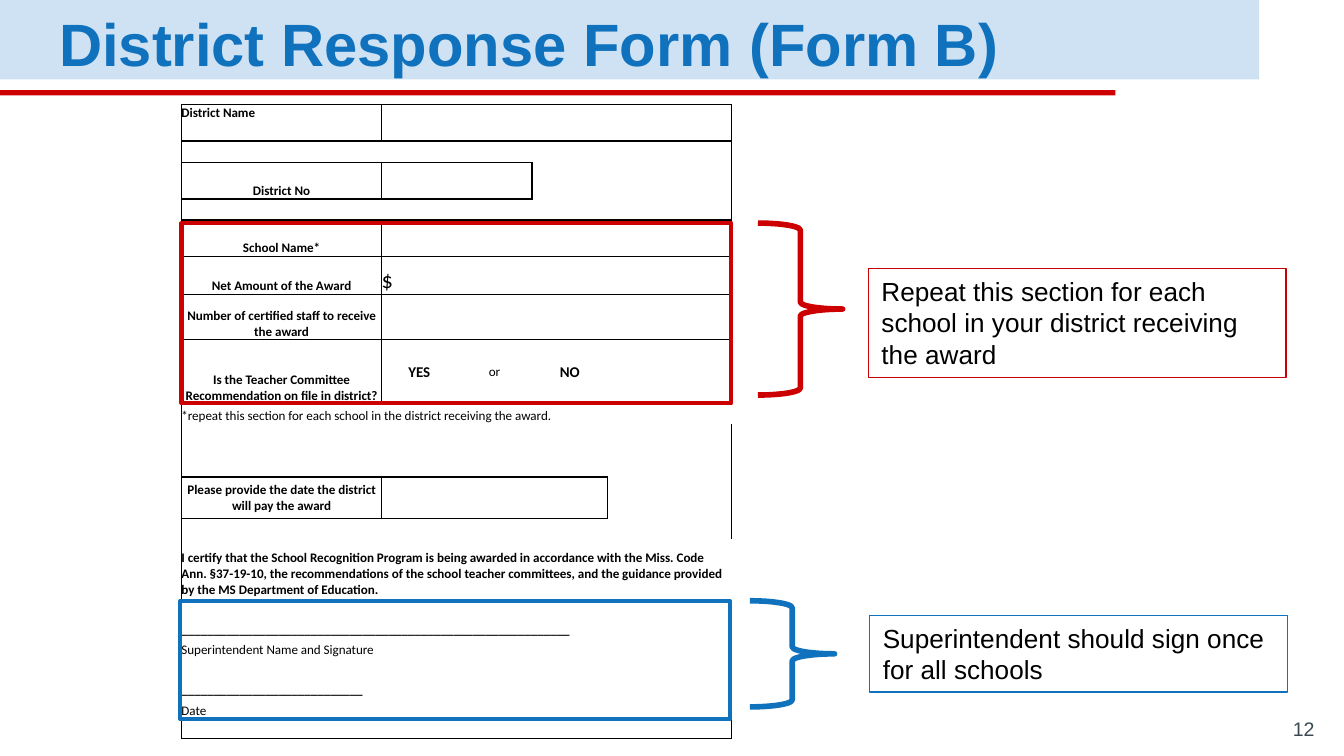
from lxml.etree import SubElement
from pptx import Presentation
from pptx.dml.color import RGBColor as RGB
from pptx.enum.shapes import MSO_SHAPE as SHAPE
from pptx.enum.text import MSO_ANCHOR as ANCHOR, MSO_AUTO_SIZE as AUTO, PP_ALIGN as ALIGN
from pptx.oxml.ns import qn
from pptx.util import Inches, Pt

COLORS = {"band": "CFE2F3", "red": "CC0000", "blue": "1071BD",
          "black": "000000", "gray": "3A4950"}
COLS = [1.49, 0.56, 0.56, 0.56, 0.46, 0.46]
ROWS = [0.27, 0.16, 0.27, 0.16, 0.27, 0.28, 0.34, 0.48, 0.15, 0.21, 0.18,
        0.31, 0.15, 0.44] + [0.15] * 7
NO_STYLE = "{2D5ABB26-0587-4C30-8999-92F81FD0307C}"
LEFT, CENTER = ALIGN.LEFT, ALIGN.CENTER
TOP, MIDDLE, BOTTOM = ANCHOR.TOP, ANCHOR.MIDDLE, ANCHOR.BOTTOM

# (row, column): text, size, bold, alignment, anchor
ENTRIES = {
    (0, 0): ("District Name", 7, True, LEFT, TOP),
    (2, 0): ("District No", 7, True, CENTER, BOTTOM),
    (4, 0): ("School Name*", 7, True, CENTER, BOTTOM),
    (5, 0): ("Net Amount of the Award", 7, True, CENTER, BOTTOM),
    (5, 1): ("$", 12, False, LEFT, BOTTOM),
    (6, 0): ("Number of certified staff to receive the award", 7, True, CENTER, BOTTOM),
    (7, 0): ("Is the Teacher Committee Recommendation on file in district?",
             7, True, CENTER, BOTTOM),
    (7, 1): ("YES", 8, True, CENTER, MIDDLE),
    (7, 2): ("or", 7, False, CENTER, MIDDLE),
    (7, 3): ("NO", 8, True, CENTER, MIDDLE),
    (8, 0): ("*repeat this section for each school in the district receiving the award.",
             7, False, LEFT, BOTTOM),
    (11, 0): ("Please provide the date the district will pay the award",
              7, True, CENTER, MIDDLE),
    (13, 0): ("I certify that the School Recognition Program is being awarded in "
              "accordance with the Miss. Code Ann. §37-19-10, the recommendations of the "
              "school teacher committees, and the guidance provided by the MS Department "
              "of Education.", 7, True, LEFT, BOTTOM),
    (15, 0): ("_" * 60, 7, True, LEFT, BOTTOM),
    (16, 0): ("Superintendent Name and Signature", 7, False, LEFT, BOTTOM),
    (18, 0): ("_" * 28, 7, True, LEFT, BOTTOM),
    (19, 0): ("Date", 7, False, LEFT, BOTTOM),
}
# row, first column, last column of each merged cell
MERGES = [(8, 0, 5), (13, 0, 5), (14, 1, 3), (14, 4, 5), (15, 0, 4), (16, 0, 1), (18, 0, 1)]
# top row, left column, bottom row, right column, line width
FRAMES = ([(r, c, r, end, 0.5) for r in range(4, 8) for c, end in ((0, 0), (1, 5))]
          + [(0, 0, 0, 0, 1), (0, 1, 0, 5, 1), (2, 0, 2, 0, 1), (2, 1, 2, 2, 1),
             (4, 0, 7, 5, 1), (11, 0, 11, 0, 1), (11, 1, 11, 3, 1), (0, 0, 20, 5, 0.5)])


def color(name):
    return RGB.from_string(COLORS[name])


def apply(obj, **values):
    for name, value in values.items():
        setattr(obj, name, value)


def write(tf, text, size, name="black", bold=False, align=LEFT, font="Arial"):
    p = tf.paragraphs[0]
    p.alignment = align
    r = p.add_run()
    r.text = text
    apply(r.font, size=Pt(size), bold=bold, name=font)
    r.font.color.rgb = color(name)
    return p


def add_shape(s, kind, box, fill=None, line=None, width=1):
    sp = s.shapes.add_shape(kind, *map(Inches, box))
    sp.shadow.inherit = False
    if fill:
        sp.fill.solid()
        sp.fill.fore_color.rgb = color(fill)
    else:
        sp.fill.background()
    if line:
        sp.line.color.rgb = color(line)
        sp.line.width = Pt(width)
    else:
        sp.line.fill.background()
    return sp


def add_header(s, title):
    add_shape(s, SHAPE.RECTANGLE, (0, 0, 9.37, 0.59), fill="band")
    add_shape(s, SHAPE.RECTANGLE, (0, 0.67, 8.3, 0.04), fill="red")
    sp = s.shapes.title
    s.shapes._spTree.append(sp._element)  # title in front of the band
    apply(sp, left=Inches(0.34), top=Inches(0.03), width=Inches(9.03), height=Inches(0.49))
    tf = sp.text_frame
    apply(tf, auto_size=AUTO.NONE, vertical_anchor=MIDDLE, word_wrap=True,
          margin_left=Inches(0.1), margin_right=Inches(0.1),
          margin_top=Inches(0.1), margin_bottom=Inches(0.1))
    p = write(tf, title, 32, "blue", True)
    apply(p, line_spacing=1.15, space_after=Pt(16))


def frame_borders():
    """Map each cell to its border widths, shared edges included."""
    borders = {}

    def mark(r, c, side, width):
        if 0 <= r < len(ROWS) and 0 <= c < len(COLS):
            borders.setdefault((r, c), {})[side] = width

    for top, left, bottom, right, width in FRAMES:
        for r in range(top, bottom + 1):
            for c, side in ((left, "L"), (left - 1, "R"), (right, "R"), (right + 1, "L")):
                mark(r, c, side, width)
        for c in range(left, right + 1):
            for r, side in ((top, "T"), (top - 1, "B"), (bottom, "B"), (bottom + 1, "T")):
                mark(r, c, side, width)
    return borders


def draw_borders(cell, widths):
    tcPr = cell._tc.get_or_add_tcPr()
    for side in "LRTB":
        ln = SubElement(tcPr, qn("a:ln" + side), w=str(Pt(widths.get(side, 0))))
        if side in widths:
            SubElement(SubElement(ln, qn("a:solidFill")), qn("a:srgbClr"), val=COLORS["black"])
        else:
            SubElement(ln, qn("a:noFill"))


def add_form(s, left, top):
    table = s.shapes.add_table(len(ROWS), len(COLS), Inches(left), Inches(top),
                               Inches(sum(COLS)), Inches(sum(ROWS))).table
    apply(table, first_row=False, horz_banding=False)
    table._tbl.tblPr.find(qn("a:tableStyleId")).text = NO_STYLE
    for col, width in zip(table.columns, COLS):
        col.width = Inches(width)
    for row, height in zip(table.rows, ROWS):
        row.height = Inches(height)
    for r, first, last in MERGES:
        table.cell(r, first).merge(table.cell(r, last))
    borders = frame_borders()
    for r in range(len(ROWS)):
        for c in range(len(COLS)):
            cell = table.cell(r, c)
            apply(cell, margin_left=0, margin_right=0, margin_top=0, margin_bottom=0)
            draw_borders(cell, borders.get((r, c), {}))
            cell.fill.background()
            if (r, c) in ENTRIES:
                text, size, bold, align, anchor = ENTRIES[r, c]
                cell.vertical_anchor = anchor
                write(cell.text_frame, text, size, "black", bold, align, "Calibri")
            else:  # small empty line keeps the row low
                SubElement(cell.text_frame.paragraphs[0]._p, qn("a:endParaRPr"), sz="700")


def add_callout(s, text, name, note, brace, frame):
    sp = add_shape(s, SHAPE.RECTANGLE, note, line=name, width=0.75)
    apply(sp.text_frame, word_wrap=True, vertical_anchor=TOP, auto_size=AUTO.SHAPE_TO_FIT_TEXT)
    write(sp.text_frame, text, 14)
    add_shape(s, SHAPE.RIGHT_BRACE, brace, line=name, width=3)
    add_shape(s, SHAPE.RECTANGLE, frame, line=name, width=2.25)


def add_page_number(s, box, number):
    tf = s.shapes.add_textbox(*map(Inches, box)).text_frame
    apply(tf, word_wrap=True, vertical_anchor=BOTTOM, margin_top=Inches(0.1),
          margin_bottom=Inches(0.1))
    write(tf, number, 10.5, "gray", align=ALIGN.RIGHT)


def main():
    prs = Presentation()
    apply(prs, slide_width=Inches(10), slide_height=Inches(10 * 9 / 16))
    s = prs.slides.add_slide(prs.slide_layouts[5])
    add_header(s, "District Response Form (Form B)")
    add_page_number(s, (9.28, 5.34, 0.6, 0.26), "12")
    add_form(s, 1.35, 0.78)
    add_callout(s, "Repeat this section for each school in your district receiving the award",
                "red", (6.46, 2, 3.11, 0.81), (5.64, 1.66, 0.63, 1.28), (1.35, 1.66, 4.09, 1.34))
    add_callout(s, "Superintendent should sign once for all schools",
                "blue", (6.47, 4.58, 3.11, 0.57), (5.58, 4.47, 0.63, 0.79),
                (1.34, 4.47, 4.09, 0.88))
    prs.save("out.pptx")


if __name__ == "__main__":
    main()
